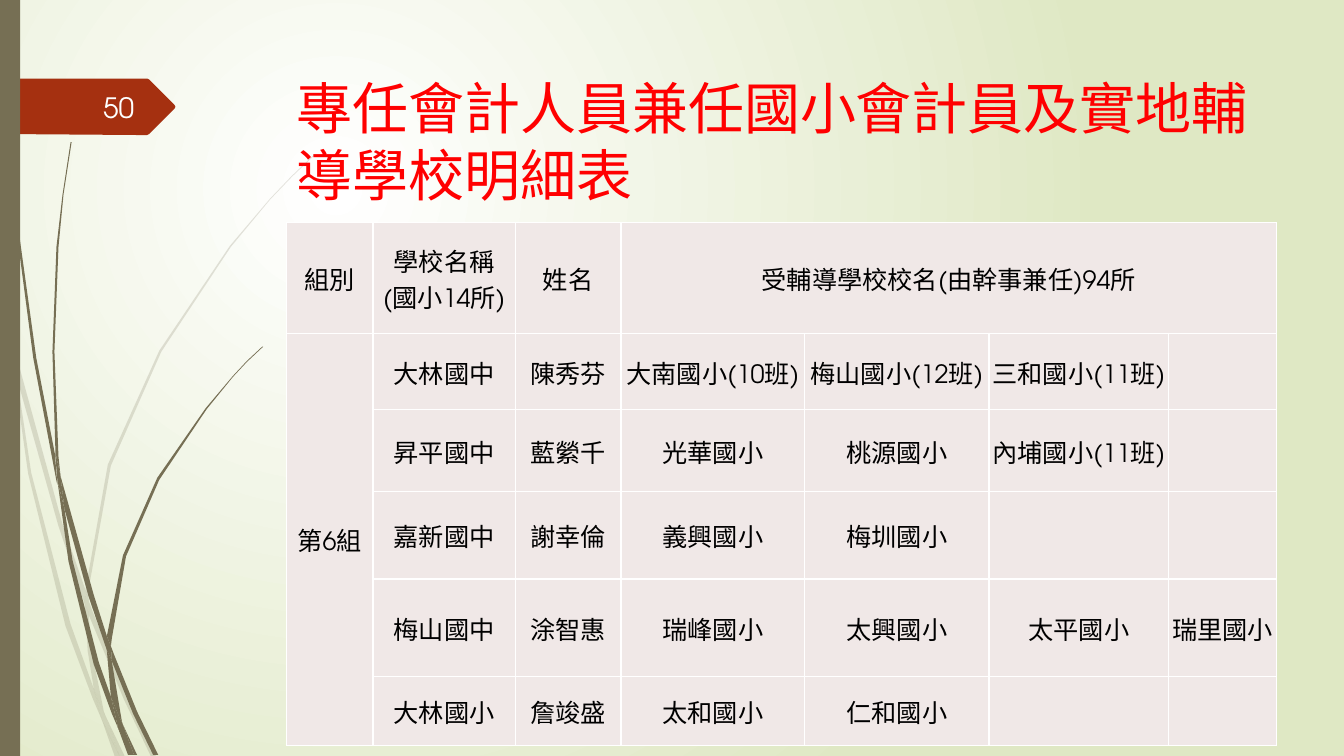
import lxml.etree
import pptx
import pptx.dml.color
import pptx.enum.shapes
import pptx.enum.text
import pptx.oxml
import pptx.oxml.ns
import pptx.util

PX = 9144  # EMU per px, 100 px to the inch
THEME = {
    "font": "TeX Gyre Adventor",
    "title": ("FF0000", 40), "cell": ("000000", 18), "number": ("FEFFFF", 20),
    "stem": "766F54", "tag": "A53010", "cell fill": "F0E8E7",
    "border": "FFFFFF", "background": ("FFFFFF", "DFE8C4"),
}
rgb = pptx.dml.color.RGBColor.from_string
qn = pptx.oxml.ns.qn
MIDDLE = pptx.enum.text.MSO_ANCHOR.MIDDLE


def write(paragraph, text, role, align):
    paragraph.text = text
    paragraph.alignment = align
    color, size = THEME[role]
    for run in paragraph.runs:
        run.font.name = THEME["font"]
        run.font.size = pptx.util.Pt(size)
        run.font.color.rgb = rgb(color)


def paint(shape, color, opacity=100):
    shape.shadow.inherit = False
    shape.fill.solid()
    shape.fill.fore_color.rgb = rgb(color)
    shape.line.fill.background()
    if opacity < 100:
        color_node = shape._element.spPr.find(".//" + qn("a:srgbClr"))
        lxml.etree.SubElement(color_node, qn("a:alpha"), val=str(opacity * 1000))


deck = pptx.Presentation()
deck.slide_width, deck.slide_height = 1333 * PX, 750 * PX
slide = deck.slides.add_slide(deck.slide_layouts[5])
shapes = slide.shapes

# Background: a glow that spreads from the upper left
glow = slide.background.fill
glow.gradient()
for stop, color in zip(glow.gradient_stops, THEME["background"]):
    stop.color.rgb = rgb(color)
for stop, position in zip(glow.gradient_stops, (0, 1)):
    stop.position = position
gradient = slide._element.find(".//" + qn("a:gradFill"))
linear = gradient.find(qn("a:lin"))
glow_center = pptx.oxml.parse_xml(
    '<a:path xmlns:a="http://schemas.openxmlformats.org/drawingml/2006/main" path="circle">'
    '<a:fillToRect l="50000" t="50000" r="100000" b="100000"/></a:path>')
gradient.replace(linear, glow_center)

# Grass: outline points of each blade section, pale blades behind dark ones
pale_blades = [
    [(11, 350), (9, 322), (0, 282), (0, 299), (10, 344)],
    [(58, 522), (84, 599), (85, 586), (62, 520), (14, 345), (17, 376)],
    [(92, 607), (88, 596), (88, 610), (123, 694), (150, 751), (155, 751), (127, 692)],
    [(119, 751), (124, 751), (105, 711)],
    [(93, 683), (70, 619), (31, 469), (17, 376), (11, 350), (28, 470), (65, 621),
     (92, 693), (101, 714), (99, 707)],
    [(84, 599), (87, 646), (93, 683), (96, 692), (105, 711), (103, 706), (91, 646),
     (88, 610), (88, 608)],
    [(88, 584), (110, 462), (160, 349), (229, 245), (268, 198), (290, 175), (312, 154),
     (312, 153), (289, 175), (268, 197), (228, 244), (158, 348), (107, 461), (85, 584),
     (85, 586), (88, 596)],
    [(101, 714), (114, 751), (119, 751)],
    [(88, 608), (88, 610), (88, 596), (85, 586), (84, 599)],
    [(96, 692), (93, 683), (99, 707), (101, 714), (119, 751), (105, 711)],
]
dark_blades = [
    [(7, 110), (17, 233), (33, 355), (56, 477), (57, 481), (55, 457), (55, 453),
     (36, 355), (19, 232), (8, 109), (5, 48), (4, 0), (3, 0), (4, 48)],
    [(88, 592), (106, 645), (106, 633), (106, 631), (93, 590), (60, 472), (64, 505)],
    [(113, 649), (110, 641), (111, 656), (132, 708), (152, 749), (157, 749), (136, 706)],
    [(110, 691), (98, 657), (72, 556), (64, 505), (57, 477), (68, 557), (93, 659),
     (111, 708), (117, 722), (116, 717)],
    [(60, 472), (58, 453), (54, 349), (58, 245), (63, 193), (71, 141), (70, 141),
     (62, 193), (56, 245), (52, 349), (55, 449)],
    [(133, 749), (136, 749), (122, 719)],
    [(57, 477), (64, 505), (60, 472), (55, 449), (55, 453)],
    [(111, 633), (125, 552), (158, 476), (205, 406), (231, 374), (245, 359), (261, 344),
     (260, 344), (245, 358), (231, 373), (204, 405), (156, 474), (122, 551), (106, 631),
     (110, 641)],
    [(117, 722), (127, 749), (131, 749)],
    [(106, 645), (110, 691), (116, 706), (122, 719), (121, 716), (111, 656), (109, 651)],
    [(106, 645), (109, 651), (111, 656), (110, 641), (106, 631), (106, 633)],
    [(116, 706), (110, 691), (116, 717), (117, 722), (130, 749), (133, 749), (122, 719)],
]
number_tag = [(174, 106), (173, 108), (148, 133), (146, 134), (136, 134), (0, 133),
              (0, 78), (146, 78), (148, 79), (173, 104)]

outlines = [(blade, "stem", 20) for blade in pale_blades]
outlines += [(blade, "stem", 100) for blade in dark_blades]
outlines.append((number_tag, "tag", 100))
for points, color, opacity in outlines:
    builder = shapes.build_freeform(*points[0], scale=PX)
    builder.add_line_segments(points[1:], close=True)
    paint(builder.convert_to_shape(), THEME[color], opacity)

# Left edge strip
strip = shapes.add_shape(pptx.enum.shapes.MSO_SHAPE.RECTANGLE, 0, 0, 20 * PX, 750 * PX)
paint(strip, THEME["stem"])

# Title
title = shapes.title
title.left, title.top, title.width, title.height = [n * PX for n in (284, 68, 975, 140)]
title.text_frame.auto_size = pptx.enum.text.MSO_AUTO_SIZE.NONE
title.text_frame.vertical_anchor = pptx.enum.text.MSO_ANCHOR.TOP
write(title.text_frame.paragraphs[0], "專任會計人員兼任國小會計員及實地輔導學校明細表",
      "title", pptx.enum.text.PP_ALIGN.LEFT)

# Table of schools
schools = [
    ["組別", "學校名稱\n(國小14所)", "姓名", "受輔導學校校名(由幹事兼任)94所", "", "", ""],
    ["第6組", "大林國中", "陳秀芬", "大南國小(10班)", "梅山國小(12班)", "三和國小(11班)", ""],
    ["", "昇平國中", "藍縈千", "光華國小", "桃源國小", "內埔國小(11班)", ""],
    ["", "嘉新國中", "謝幸倫", "義興國小", "梅圳國小", "", ""],
    ["", "梅山國中", "涂智惠", "瑞峰國小", "太興國小", "太平國小", "瑞里國小"],
    ["", "大林國小", "詹竣盛", "太和國小", "仁和國小", "", ""],
]
column_widths = [86, 141, 105, 182, 183, 178, 107]
row_heights = [68, 76, 81, 87, 97, 68]
table = shapes.add_table(len(schools), len(column_widths), 284 * PX, 221 * PX,
                         sum(column_widths) * PX, sum(row_heights) * PX).table
for column, width in zip(table.columns, column_widths):
    column.width = width * PX
for row, height in zip(table.rows, row_heights):
    row.height = height * PX
table.cell(0, 3).merge(table.cell(0, 6))
table.cell(1, 0).merge(table.cell(5, 0))

for row, names in zip(table.rows, schools):
    for cell, name in zip(row.cells, names):
        cell.margin_left = cell.margin_right = cell.margin_top = PX
        cell.margin_bottom = 0
        cell.vertical_anchor = MIDDLE
        if name:
            write(cell.text_frame.paragraphs[0], name, "cell",
                  pptx.enum.text.PP_ALIGN.CENTER)
        properties = cell._tc.get_or_add_tcPr()
        for side in ("a:lnL", "a:lnR", "a:lnT", "a:lnB"):
            border = lxml.etree.SubElement(properties, qn(side), w=str(pptx.util.Pt(1)))
            border_fill = lxml.etree.SubElement(border, qn("a:solidFill"))
            lxml.etree.SubElement(border_fill, qn("a:srgbClr"), val=THEME["border"])
        cell.fill.solid()
        cell.fill.fore_color.rgb = rgb(THEME["cell fill"])

# Page number
page_number = shapes.add_textbox(58 * PX, 86 * PX, 85 * PX, 40 * PX).text_frame
page_number.word_wrap = True
page_number.vertical_anchor = MIDDLE
write(page_number.paragraphs[0], "50", "number", pptx.enum.text.PP_ALIGN.RIGHT)

deck.save("out.pptx")
